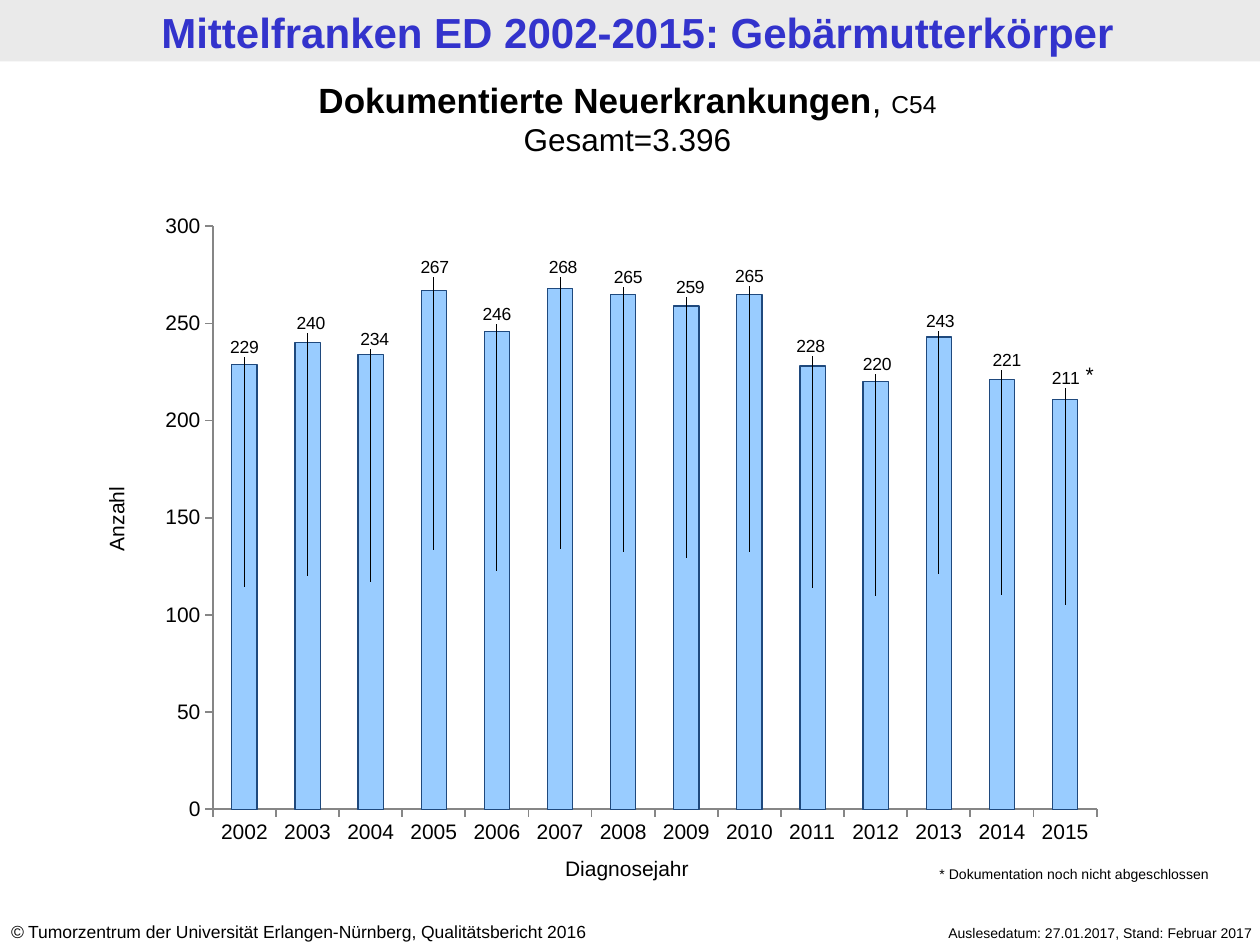
from dataclasses import dataclass

from lxml.etree import SubElement
from pptx import Presentation
from pptx.chart.data import CategoryChartData
from pptx.dml.color import RGBColor
from pptx.enum.chart import XL_CHART_TYPE, XL_LABEL_POSITION, XL_TICK_MARK
from pptx.enum.shapes import MSO_SHAPE
from pptx.enum.text import MSO_ANCHOR, MSO_AUTO_SIZE, PP_ALIGN
from pptx.oxml.ns import qn
from pptx.util import Cm, Pt


@dataclass(frozen=True)
class Theme:
    font: str = "Arial"
    text: RGBColor = RGBColor(0x00, 0x00, 0x00)
    title: RGBColor = RGBColor(0x33, 0x33, 0xCC)
    band: RGBColor = RGBColor(0xEA, 0xEA, 0xEA)
    bar: RGBColor = RGBColor(0x99, 0xCC, 0xFF)
    bar_line: RGBColor = RGBColor(0x1F, 0x49, 0x7D)
    axis: RGBColor = RGBColor(0x86, 0x86, 0x86)
    title_size: int = 24
    heading_size: int = 20
    total_size: int = 18
    code_size: int = 14
    axis_size: int = 12
    label_size: int = 10
    note_size: int = 8


# year, cases, label shift to the right and label height above the bar (cm)
CASES = [
    (2002, 229, 0, 0.34), (2003, 240, 0.07, 0.38), (2004, 234, 0.08, 0.3),
    (2005, 267, 0.02, 0.46), (2006, 246, 0, 0.34), (2007, 268, 0.06, 0.42),
    (2008, 265, 0.1, 0.34), (2009, 259, 0.08, 0.36), (2010, 265, 0, 0.36),
    (2011, 228, -0.04, 0.4), (2012, 220, 0.03, 0.34), (2013, 243, 0.03, 0.32),
    (2014, 221, 0.1, 0.38), (2015, 211, 0.02, 0.42),
]
AXIS_MAX = 300
PLOT_X, PLOT_Y, PLOT_W, PLOT_H = 0.07, 0.03, 0.91, 0.9


def add_layout(parent, index, **values):
    """Insert a manual chart layout; values are c:manualLayout children in order."""
    layout = SubElement(parent, qn("c:layout"))
    manual = SubElement(layout, qn("c:manualLayout"))
    for tag, value in values.items():
        SubElement(manual, qn(f"c:{tag}")).set("val", str(value))
    parent.insert(index, layout)


class SlideBuilder:
    def __init__(self, slide, theme):
        self.slide = slide
        self.theme = theme

    def style(self, font, size, color=None, bold=False, italic=False):
        font.name = self.theme.font
        font.size = Pt(size)
        font.bold = bold
        font.italic = italic
        font.color.rgb = color or self.theme.text

    def band(self, width, height):
        sp = self.slide.shapes.add_shape(MSO_SHAPE.RECTANGLE, 0, 0, Cm(width), Cm(height))
        sp.shadow.inherit = False
        sp.fill.solid()
        sp.fill.fore_color.rgb = self.theme.band
        sp.line.fill.background()
        self.slide.shapes._spTree.insert(2, sp._element)  # behind the title

    def title(self, text, x, y, w, h):
        sp = self.slide.shapes.title
        sp.left, sp.top, sp.width, sp.height = Cm(x), Cm(y), Cm(w), Cm(h)
        tf = sp.text_frame
        tf.text = text
        tf.auto_size = MSO_AUTO_SIZE.SHAPE_TO_FIT_TEXT
        tf.vertical_anchor = MSO_ANCHOR.TOP
        tf.margin_left = tf.margin_right = Cm(0.23)
        tf.margin_top = tf.margin_bottom = Cm(0.1)
        p = tf.paragraphs[0]
        p.alignment = PP_ALIGN.CENTER
        self.style(p.runs[0].font, self.theme.title_size, self.theme.title, bold=True)

    def text(self, lines, x, y, w, h, align=PP_ALIGN.LEFT, rotation=0):
        """Each line is a list of runs: (text, size, optional style names)."""
        sp = self.slide.shapes.add_textbox(Cm(x), Cm(y), Cm(w), Cm(h))
        sp.rotation = rotation
        tf = sp.text_frame
        tf.word_wrap = True
        tf.auto_size = MSO_AUTO_SIZE.SHAPE_TO_FIT_TEXT
        for i, line in enumerate(lines):
            p = tf.add_paragraph() if i else tf.paragraphs[0]
            p.alignment = align
            for text, size, *flags in line:
                r = p.add_run()
                r.text = text
                self.style(r.font, size, bold="bold" in flags, italic="italic" in flags)

    def axis(self, axis):
        axis.has_major_gridlines = False
        axis.major_tick_mark = XL_TICK_MARK.OUTSIDE
        axis.minor_tick_mark = XL_TICK_MARK.NONE
        axis.format.line.color.rgb = self.theme.axis
        axis.format.line.width = Pt(1)
        self.style(axis.tick_labels.font, self.theme.axis_size)

    def column_chart(self, cases, x, y, w, h):
        data = CategoryChartData()
        data.categories = [str(year) for year, *_ in cases]
        data.add_series("Series 1", [count for _, count, *_ in cases])
        chart = self.slide.shapes.add_chart(
            XL_CHART_TYPE.COLUMN_STACKED, Cm(x), Cm(y), Cm(w), Cm(h), data).chart
        chart.has_title = False
        chart.has_legend = False
        self.style(chart.font, self.theme.axis_size)
        self.axis(chart.category_axis)
        self.axis(chart.value_axis)
        chart.value_axis.minimum_scale = 0
        chart.value_axis.maximum_scale = AXIS_MAX
        chart.value_axis.major_unit = 50

        plot = chart.plots[0]
        plot.vary_by_categories = False
        plot.gap_width = 150
        plot.overlap = 100
        area = plot._element.getparent()
        for old in area.findall(qn("c:layout")):
            area.remove(old)
        add_layout(area, 0, layoutTarget="inner", xMode="edge", yMode="edge",
                   x=PLOT_X, y=PLOT_Y, w=PLOT_W, h=PLOT_H)

        series = plot.series[0]
        series.format.fill.solid()
        series.format.fill.fore_color.rgb = self.theme.bar
        series.format.line.color.rgb = self.theme.bar_line
        series.format.line.width = Pt(0.75)
        labels = series.data_labels
        labels.show_value = True
        self.style(labels.font, self.theme.label_size)
        for i in range(len(cases)):
            label = series.points[i].data_label
            self.style(label.font, self.theme.label_size)
            label.position = XL_LABEL_POSITION.CENTER
        # Labels start at the middle of the bar and are lifted above its top.
        for dlbl, (_, count, shift, lift) in zip(series._element.iter(qn("c:dLbl")), cases):
            rise = count / AXIS_MAX * PLOT_H / 2 + lift / h
            add_layout(dlbl, 1, x=round(shift / w, 4), y=round(-rise, 4))


def main():
    prs = Presentation()
    prs.slide_width, prs.slide_height = Cm(25.4), Cm(19.05)
    theme = Theme()
    s = SlideBuilder(prs.slides.add_slide(prs.slide_layouts[5]), theme)
    center, right = PP_ALIGN.CENTER, PP_ALIGN.RIGHT

    s.band(25.4, 1.24)
    s.title("Mittelfranken ED 2002-2015: Gebärmutterkörper", 0.15, 0.03, 25.4, 1.24)
    s.text([[("©", theme.label_size, "italic"),
             (" Tumorzentrum der Universität Erlangen-Nürnberg, Qualitätsbericht 2016",
              theme.label_size)]], -0.03, 18.44, 13.31, 0.69)
    s.text([[("Auslesedatum: 27.01.2017, Stand: Februar 2017", theme.note_size)]],
           16.89, 18.52, 8.61, 0.61, right)
    s.column_chart(CASES, 2.92, 4.17, 19.58, 13.06)
    s.text([[("Dokumentierte Neuerkrankungen", theme.heading_size, "bold"),
             (", ", theme.heading_size), ("C54", theme.code_size)],
            [("Gesamt=3.396", theme.total_size)]], -0.1, 1.45, 25.5, 1.88, center)
    s.text([[("Diagnosejahr", theme.axis_size)]], 9.78, 17.12, 5.72, 0.76, center)
    s.text([[("Anzahl", theme.axis_size)]], 0.79, 10.08, 3.1, 0.76, center, rotation=270)
    s.text([[("*", theme.axis_size)]], 21.31, 7.16, 0.99, 0.76, right)
    s.text([[("* Dokumentation noch nicht abgeschlossen", theme.note_size)]],
           18.69, 17.32, 6.86, 0.61)
    prs.save("out.pptx")


if __name__ == "__main__":
    main()
